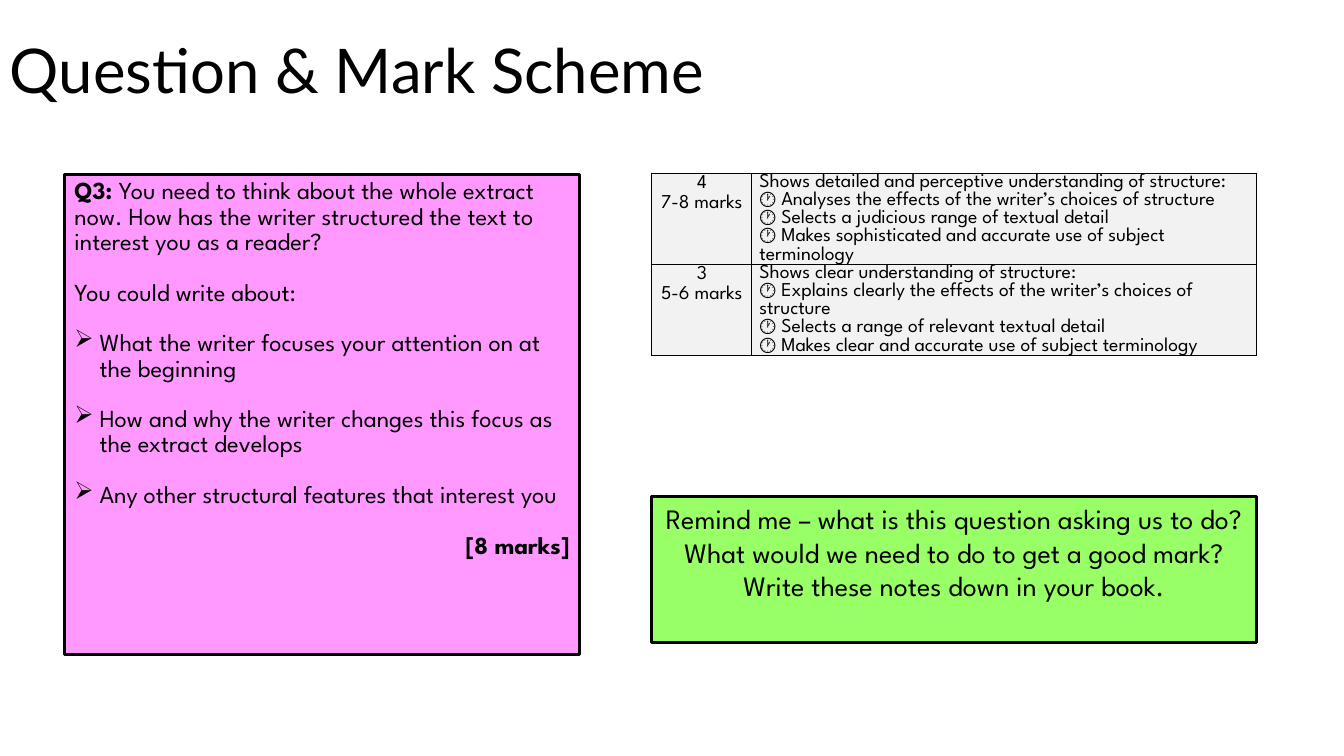
from lxml.etree import SubElement as Sub
from pptx import Presentation
from pptx.dml.color import RGBColor as RGB
from pptx.enum.shapes import MSO_SHAPE as Shape
from pptx.enum.text import MSO_ANCHOR as Anchor, PP_ALIGN as Align
from pptx.oxml.ns import qn
from pptx.util import Pt

COLORS = {
    "ink": "000000",
    "pink": "FF99FF",
    "green": "99FF66",
    "gray": "F2F2F2",
}
FACE = "League Spartan"
HINTS = [
    "What the writer focuses your attention on at the beginning",
    "How and why the writer changes this focus as the extract develops",
    "Any other structural features that interest you",
]
BANDS = [
    (["4", "7-8 marks"], [
        "Shows detailed and perceptive understanding of structure:",
        "🕐 Analyses the effects of the writer’s choices of structure",
        "🕐 Selects a judicious range of textual detail",
        "🕐 Makes sophisticated and accurate use of subject terminology",
    ]),
    (["3", "5-6 marks"], [
        "Shows clear understanding of structure:",
        "🕐 Explains clearly the effects of the writer’s choices of structure",
        "🕐 Selects a range of relevant textual detail",
        "🕐 Makes clear and accurate use of subject terminology",
    ]),
]


def color(name):
    return RGB.from_string(COLORS[name])


def write(frame, texts, size, pitch, align=Align.LEFT, face=FACE, after=0):
    frame.word_wrap = True
    for i, text in enumerate(texts):
        para = frame.paragraphs[0] if i == 0 else frame.add_paragraph()
        para.alignment = align
        para.line_spacing = pitch
        para.space_before = Pt(0)
        para.space_after = Pt(after)
        para.font.size = Pt(size)
        para.font.name = face
        para.font.color.rgb = color("ink")
        para.add_run().text = text
    return frame.paragraphs


def add_bullet(para, mark):
    props = para._p.get_or_add_pPr()
    props.set("marL", str(Pt(18)))
    props.set("indent", str(Pt(-18)))
    bullet = props.makeelement(qn("a:buChar"), {"char": mark})
    props.find(qn("a:defRPr")).addprevious(bullet)


def add_title(slide, text):
    box = slide.shapes.add_textbox(Pt(0), Pt(0), Pt(828), Pt(104.4))
    box.text_frame.vertical_anchor = Anchor.MIDDLE
    write(box.text_frame, [text], 44, 0.9, face="Lato")


def add_panel(slide, left, top, width, height, fill):
    panel = slide.shapes.add_shape(
        Shape.RECTANGLE, Pt(left), Pt(top), Pt(width), Pt(height))
    panel.shadow.inherit = False
    panel.fill.solid()
    panel.fill.fore_color.rgb = color(fill)
    panel.line.color.rgb = color("ink")
    panel.line.width = Pt(2)
    panel.text_frame.vertical_anchor = Anchor.TOP
    return panel.text_frame


def add_task(slide):
    frame = add_panel(slide, 46.1, 124.6, 368, 342.7, "pink")
    ask = ("You need to think about the whole extract now. How has the "
           "writer structured the text to interest you as a reader?")
    texts = ["Q3: ", "You could write about:", *HINTS, "[8 marks]"]
    paras = write(frame, texts, 17.5, Pt(18.1), after=18)
    paras[0].runs[0].font.bold = True
    paras[0].add_run().text = ask
    for para in paras[2:-1]:
        add_bullet(para, "➢")
    paras[-1].alignment = Align.RIGHT
    paras[-1].font.bold = True


def add_edges(cell):
    props = cell._tc.get_or_add_tcPr()
    for i, side in enumerate(("lnL", "lnR", "lnT", "lnB")):
        edge = props.makeelement(qn("a:" + side), {"w": str(Pt(1))})
        fill = Sub(edge, qn("a:solidFill"))
        Sub(fill, qn("a:srgbClr"), val=COLORS["ink"])
        props.insert(i, edge)


def fill_cell(cell, texts, pitch, align):
    cell.margin_left = cell.margin_right = Pt(5.4)
    cell.margin_top = cell.margin_bottom = Pt(0)
    cell.fill.solid()
    cell.fill.fore_color.rgb = color("gray")
    add_edges(cell)
    write(cell.text_frame, texts, 14, Pt(pitch), align)


def add_scheme(slide):
    table = slide.shapes.add_table(
        len(BANDS), 2, Pt(465.6), Pt(123.8), Pt(432), Pt(130)).table
    table.columns[0].width = Pt(71.5)
    table.columns[1].width = Pt(360.5)
    for i, (marks, skills) in enumerate(BANDS):
        table.rows[i].height = Pt(65)
        fill_cell(table.cell(i, 0), marks, 14, Align.CENTER)
        fill_cell(table.cell(i, 1), skills, 13, Align.LEFT)


def add_prompt(slide):
    frame = add_panel(slide, 465.6, 354.6, 432, 104.4, "green")
    text = ("Remind me – what is this question asking us to do? "
            "What would we need to do to get a good mark? "
            "Write these notes down in your book.")
    write(frame, [text], 20, Pt(24), Align.CENTER)


def main():
    deck = Presentation()
    deck.slide_width = Pt(960)
    deck.slide_height = Pt(540)
    slide = deck.slides.add_slide(deck.slide_layouts[6])
    add_title(slide, "Question & Mark Scheme")
    add_task(slide)
    add_scheme(slide)
    add_prompt(slide)
    deck.save("out.pptx")


if __name__ == "__main__":
    main()
